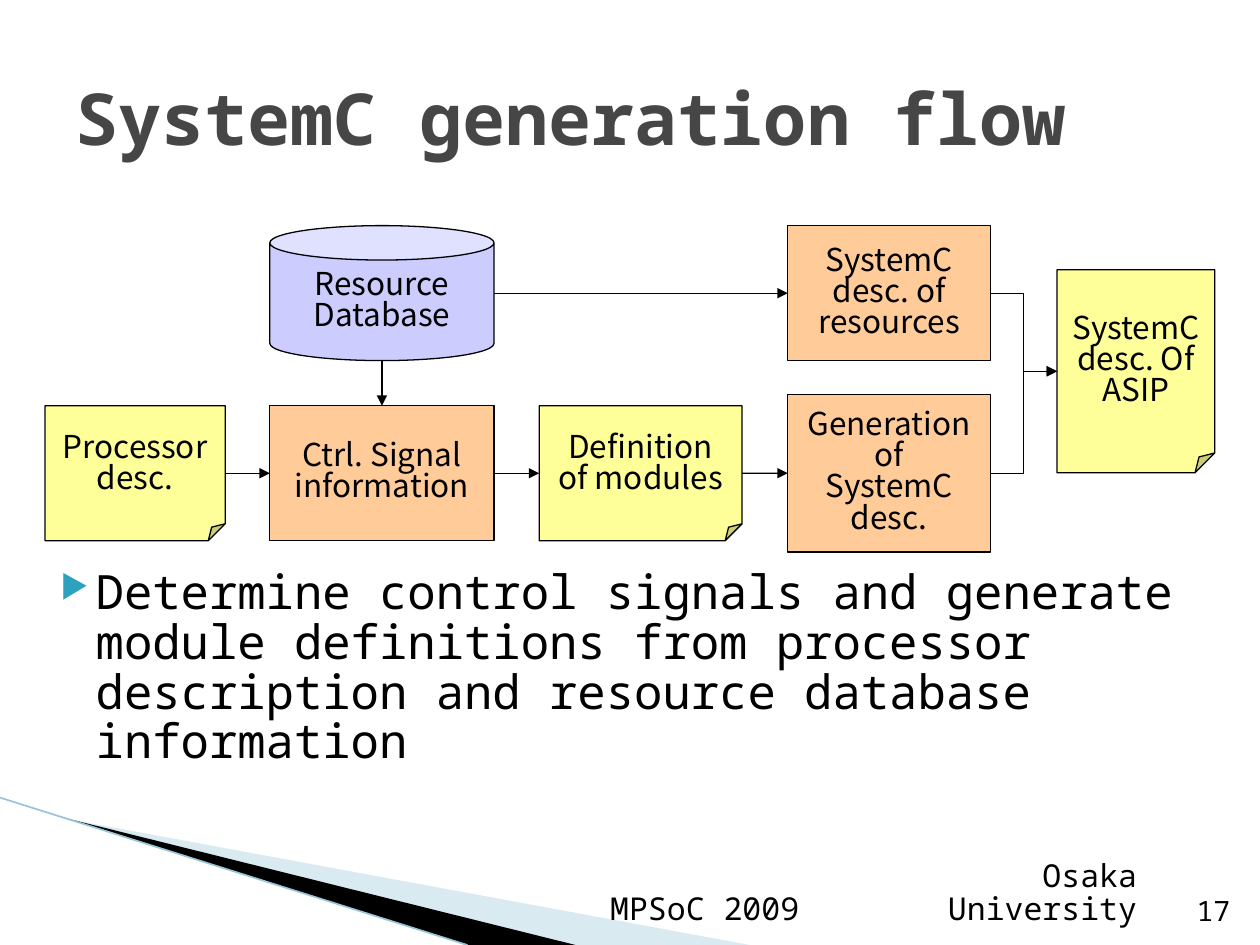
"""Build the SystemC generation flow slide."""
import lxml.etree
import pptx
import pptx.dml.color
import pptx.enum.shapes
import pptx.enum.text
import pptx.oxml.ns
import pptx.util

Cm = pptx.util.Cm
Pt = pptx.util.Pt
KIND = pptx.enum.shapes.MSO_SHAPE
LINK = pptx.enum.shapes.MSO_CONNECTOR
ALIGN = pptx.enum.text.PP_ALIGN
ANCHOR = pptx.enum.text.MSO_ANCHOR
MONO, SANS = "Noto Sans Mono", "Noto Sans CJK JP"
BLACK, YELLOW, ORANGE, VIOLET = "000000", "FFFF99", "FFCC99", "CCCCFF"
TOP, LEFT, BOTTOM, RIGHT = range(4)


def tint(code):
    return pptx.dml.color.RGBColor.from_string(code)


def add_node(parent, tag, **attrs):
    return lxml.etree.SubElement(parent, pptx.oxml.ns.qn(tag), attrs)


def find_node(parent, tag):
    return parent.find(".//" + pptx.oxml.ns.qn(tag))


def paint(shape, fill):
    shape.shadow.inherit = False
    shape.fill.solid()
    shape.fill.fore_color.rgb = tint(fill)


def add_run(para, text, font, size, color=BLACK, bold=False):
    run = para.add_run()
    run.text = text
    run.font.name = font
    run.font.size = Pt(size)
    run.font.bold = bold
    run.font.color.rgb = tint(color)


def add_text(slide, area, anchor, align):
    frame = slide.shapes.add_textbox(*map(Cm, area)).text_frame
    frame.word_wrap = True
    frame.vertical_anchor = anchor
    para = frame.paragraphs[0]
    para.alignment = align
    return para


def add_label(slide, left, width, text, size):
    para = add_text(slide, (left, 17.8, width, 1.02), ANCHOR.BOTTOM, ALIGN.RIGHT)
    para.line_spacing = 0.88
    add_run(para, text, MONO, size)


def add_bullet(para):
    props = para._p.get_or_add_pPr()
    props.set("marL", str(Cm(1.02)))
    props.set("indent", str(Cm(-0.71)))
    add_node(add_node(props, "a:buClr"), "a:srgbClr", val="2DA2BF")
    add_node(props, "a:buSzPct", val="68000")
    add_node(props, "a:buChar", char="▶")


def add_box(slide, kind, area, fill, lines, bend=None):
    box = slide.shapes.add_shape(kind, *map(Cm, area))
    paint(box, fill)
    box.line.color.rgb = tint(BLACK)
    box.line.width = Pt(0.75)
    if bend:
        guides = find_node(box.element.spPr, "a:avLst")
        guides.clear()
        add_node(guides, "a:gd", name="adj", fmla=f"val {round(bend * 100000)}")
    frame = box.text_frame
    frame.word_wrap = False
    frame.vertical_anchor = ANCHOR.MIDDLE
    frame.margin_top = frame.margin_bottom = Cm(0.1)
    for rank, line in enumerate(lines):
        para = frame.add_paragraph() if rank else frame.paragraphs[0]
        para.alignment = ALIGN.CENTER
        para.line_spacing = 0.82
        add_run(para, line, SANS, 18)
    return box


def add_note(slide, area, lines):
    return add_box(slide, KIND.FOLDED_CORNER, area, YELLOW, lines, 0.125)


def add_step(slide, area, lines):
    return add_box(slide, KIND.RECTANGLE, area, ORANGE, lines)


def add_wedge(slide, points, fill, alpha=None):
    start, *rest = [(Cm(x), Cm(y)) for x, y in points]
    pen = slide.shapes.build_freeform(*start)
    pen.add_line_segments(rest, close=True)
    wedge = pen.convert_to_shape()
    paint(wedge, fill)
    wedge.line.fill.background()
    if alpha:
        color = find_node(wedge.element.spPr, "a:srgbClr")
        add_node(color, "a:alpha", val=str(alpha * 1000))


def add_line(slide, kind, start, end, color=BLACK, width=0.75, arrow=False):
    line = slide.shapes.add_connector(kind, *start, *end)
    line.line.color.rgb = tint(color)
    line.line.width = Pt(width)
    props = line.element.spPr
    if arrow:
        add_node(find_node(props, "a:ln"), "a:tailEnd", type="triangle")
    add_node(props, "a:effectLst")
    return line


def find_side(box, side):
    across, down = ((1, 0), (0, 1), (1, 2), (2, 1))[side]
    return box.left + box.width * across // 2, box.top + box.height * down // 2


def join(slide, first, out, last, into, kind=LINK.STRAIGHT):
    line = add_line(slide, kind, find_side(first, out), find_side(last, into), arrow=True)
    if first.auto_shape_type != KIND.CAN:
        line.begin_connect(first, out)
    line.end_connect(last, into)


def draw_back(slide):
    add_wedge(slide, [(1.4, 16.52), (15.11, 19.05), (11.58, 19.05)], "A0CBDC", 40)
    add_wedge(slide, [(1.35, 16.5), (11.6, 19.05), (9.45, 19.05)], BLACK)
    add_line(slide, LINK.STRAIGHT, (Cm(0), Cm(16.08)), (Cm(9.42), Cm(19.05)), "97C5D8", 0.95)


def draw_flow(slide):
    high, low, tall = 4.55, 8.18, 2.72
    desc = add_note(slide, (0.91, low, 3.63, tall), ["Processor", "desc."])
    store = add_box(slide, KIND.CAN, (5.44, high, 4.52, tall), VIOLET,
                    ["Resource", "Database"], 0.255)
    signal = add_step(slide, (5.44, low, 4.52, tall), ["Ctrl. Signal", "information"])
    module = add_note(slide, (10.87, low, 4.09, tall), ["Definition", "of modules"])
    maker = add_step(slide, (15.88, low - 0.23, 4.09, tall + 0.46),
                     ["Generation", "of", "SystemC", "desc."])
    parts = add_step(slide, (15.88, high, 4.09, tall), ["SystemC", "desc. of", "resources"])
    asip = add_note(slide, (21.31, 5.44, 3.18, 4.09), ["SystemC", "desc. Of", "ASIP"])
    chain = [desc, signal, module, maker]
    for first, last in zip(chain, chain[1:]):
        join(slide, first, RIGHT, last, LEFT)
    join(slide, store, BOTTOM, signal, TOP)
    join(slide, store, RIGHT, parts, LEFT)
    for first in (parts, maker):
        join(slide, first, RIGHT, asip, LEFT, LINK.ELBOW)


def main():
    deck = pptx.Presentation()
    deck.slide_width, deck.slide_height = Cm(25.4), Cm(19.05)
    slide = deck.slides.add_slide(deck.slide_layouts[6])
    draw_back(slide)
    title = add_text(slide, (1.27, 0.76, 22.86, 3.18), ANCHOR.MIDDLE, ALIGN.LEFT)
    add_run(title, "SystemC generation flow", MONO, 41, "464646", True)
    body = add_text(slide, (0.66, 11.35, 24.05, 6.91), ANCHOR.TOP, ALIGN.LEFT)
    add_bullet(body)
    body.line_spacing = 0.88
    add_run(body, "Determine control signals and generate module definitions from "
            "processor description and resource database information", MONO, 27)
    draw_flow(slide)
    add_label(slide, 9.83, 6.53, "MPSoC 2009", 18)
    add_label(slide, 16.64, 6.53, "Osaka University", 18)
    add_label(slide, 23.22, 1.83, "17", 16)
    deck.save("out.pptx")


if __name__ == "__main__":
    main()
